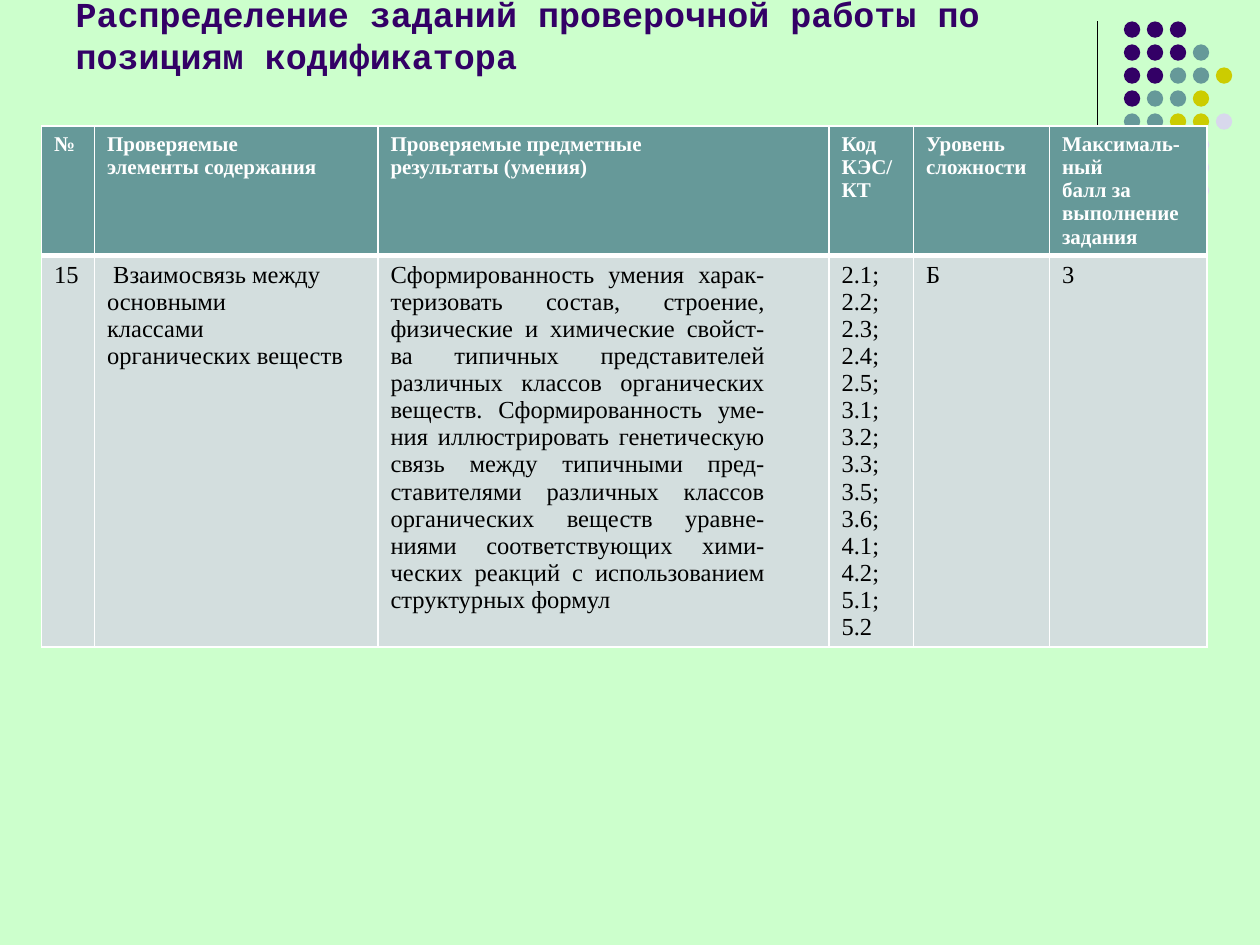
from dataclasses import dataclass

from lxml import etree
from pptx import Presentation
from pptx import util as u
from pptx.dml.color import RGBColor
from pptx.enum import shapes, text
from pptx.oxml import ns

MINT = RGBColor(0xCC, 0xFF, 0xCC)
PURPLE = RGBColor(0x33, 0x00, 0x66)
TEAL = RGBColor(0x66, 0x99, 0x99)
OLIVE = RGBColor(0xCC, 0xCC, 0x00)
LAVENDER = RGBColor(0xD8, 0xD8, 0xEC)
PALE_TEAL = RGBColor(0xD3, 0xDE, 0xDE)
WHITE = RGBColor(0xFF, 0xFF, 0xFF)
BLACK = RGBColor(0x00, 0x00, 0x00)

DOT_COLORS = {"P": PURPLE, "T": TEAL, "Y": OLIVE, "L": LAVENDER}
DOT_ROWS = ["PPP", "PPPT", "PPTTY", "PTTY", "TTYYL", "TYYL", "YYLL", " L L"]
DOT_LEFT, DOT_TOP, DOT_SIZE = 8.92, 0.17, 0.13
DOT_PITCH = 0.73 / 4


@dataclass
class RowStyle:
    height: float
    fill: RGBColor
    font: dict
    color: RGBColor
    bottom_border: float


@dataclass
class Column:
    width: float
    heading: str
    content: str
    justified: bool = False
    right_margin: float = 0.1


HEADER = RowStyle(1.02, TEAL, {"name": "Times New Roman", "size": u.Pt(12), "bold": True}, WHITE, 3)
BODY = RowStyle(3.11, PALE_TEAL, {"name": "Times New Roman", "size": u.Pt(14), "bold": False}, BLACK, 1)

SKILLS = (
    "Сформированность умения харак-теризовать состав, строение, физические и химические "
    "свойст-ва типичных представителей различных классов органических веществ. "
    "Сформированность уме-ния иллюстрировать генетическую связь между типичными "
    "пред-ставителями различных классов органических веществ уравне-ниями "
    "соответствующих хими-ческих реакций с использованием структурных формул"
)
CODES = "2.1; 2.2; 2.3; 2.4; 2.5; 3.1; 3.2; 3.3; 3.5; 3.6; 4.1; 4.2; 5.1; 5.2"

COLUMNS = [
    Column(0.42, "№", "15"),
    Column(2.25, "Проверяемые\nэлементы содержания",
           " Взаимосвязь между основными\vклассами\nорганических веществ"),
    Column(3.58, "Проверяемые предметные\nрезультаты (умения)", SKILLS,
           justified=True, right_margin=0.51),
    Column(0.67, "Код\nКЭС/\nКТ", CODES.replace(" ", "\n")),
    Column(1.08, "Уровень\nсложности", "Б"),
    Column(1.25, "Максималь-\nный\nбалл за\nвыполнение\nзадания", "3"),
]


def apply_font(font, values: dict, color: RGBColor) -> None:
    for name, value in values.items():
        setattr(font, name, value)
    font.color.rgb = color


def add_title(page) -> None:
    title = page.shapes.title
    place = {"left": 0.5, "top": 0.13, "width": 8.25, "height": 0.53}
    for name, value in place.items():
        setattr(title, name, u.Inches(value))
    frame = title.text_frame
    frame.text = "Распределение заданий проверочной работы по позициям кодификатора"
    frame.word_wrap = True
    frame.auto_size = text.MSO_AUTO_SIZE.NONE
    frame.vertical_anchor = text.MSO_ANCHOR.BOTTOM
    para = frame.paragraphs[0]
    para.alignment = text.PP_ALIGN.LEFT
    apply_font(para.runs[0].font, {"name": "Courier New", "size": u.Pt(20), "bold": True}, PURPLE)


def add_divider(page) -> None:
    x = u.Inches(8.71)
    line = page.shapes.add_connector(
        shapes.MSO_CONNECTOR.STRAIGHT, x, u.Inches(0.17), x, u.Inches(1.83))
    line.line.color.rgb = BLACK
    line.line.width = u.Pt(0.75)
    etree.SubElement(line._element.spPr, ns.qn("a:effectLst"))


def add_dots(page) -> None:
    group = page.shapes.add_group_shape()
    for row, codes in enumerate(DOT_ROWS):
        for col, code in enumerate(codes):
            if code not in DOT_COLORS:
                continue
            dot = group.shapes.add_shape(
                shapes.MSO_SHAPE.OVAL,
                u.Inches(DOT_LEFT + col * DOT_PITCH), u.Inches(DOT_TOP + row * DOT_PITCH),
                u.Inches(DOT_SIZE), u.Inches(DOT_SIZE))
            dot.shadow.inherit = False
            dot.fill.solid()
            dot.fill.fore_color.rgb = DOT_COLORS[code]
            dot.line.fill.background()


def add_borders(cell, widths: dict) -> None:
    """Draw white cell borders; widths maps L, R, T, B (in this order) to points."""
    properties = cell._tc.get_or_add_tcPr()
    for side, width in widths.items():
        line = etree.SubElement(properties, ns.qn(f"a:ln{side}"), w=str(u.Pt(width)))
        fill = etree.SubElement(line, ns.qn("a:solidFill"))
        etree.SubElement(fill, ns.qn("a:srgbClr"), val=str(WHITE))


def fill_cell(cell, words: str, style: RowStyle, top_border: float) -> None:
    add_borders(cell, {"L": 1, "R": 1, "T": top_border, "B": style.bottom_border})
    cell.fill.solid()
    cell.fill.fore_color.rgb = style.fill
    cell.text = words
    for para in cell.text_frame.paragraphs:
        for span in para.runs:
            apply_font(span.font, style.font, style.color)


def add_task_table(page) -> None:
    width = sum(column.width for column in COLUMNS)
    frame = page.shapes.add_table(
        2, len(COLUMNS), u.Inches(0.33), u.Inches(1),
        u.Inches(width), u.Inches(HEADER.height + BODY.height))
    table = frame.table
    table.horz_banding = False
    for row, style in zip(table.rows, (HEADER, BODY)):
        row.height = u.Inches(style.height)
    for index, column in enumerate(COLUMNS):
        table.columns[index].width = u.Inches(column.width)
        fill_cell(table.cell(0, index), column.heading, HEADER, 1)
        cell = table.cell(1, index)
        fill_cell(cell, column.content, BODY, HEADER.bottom_border)
        cell.margin_right = u.Inches(column.right_margin)
        if column.justified:
            cell.text_frame.paragraphs[0].alignment = text.PP_ALIGN.JUSTIFY


def main() -> None:
    deck = Presentation()
    deck.slide_width, deck.slide_height = u.Inches(10), u.Inches(7.5)
    page = deck.slides.add_slide(deck.slide_layouts[5])
    page.background.fill.solid()
    page.background.fill.fore_color.rgb = MINT
    add_divider(page)
    add_dots(page)
    add_title(page)
    add_task_table(page)
    deck.save("out.pptx")


if __name__ == "__main__":
    main()
